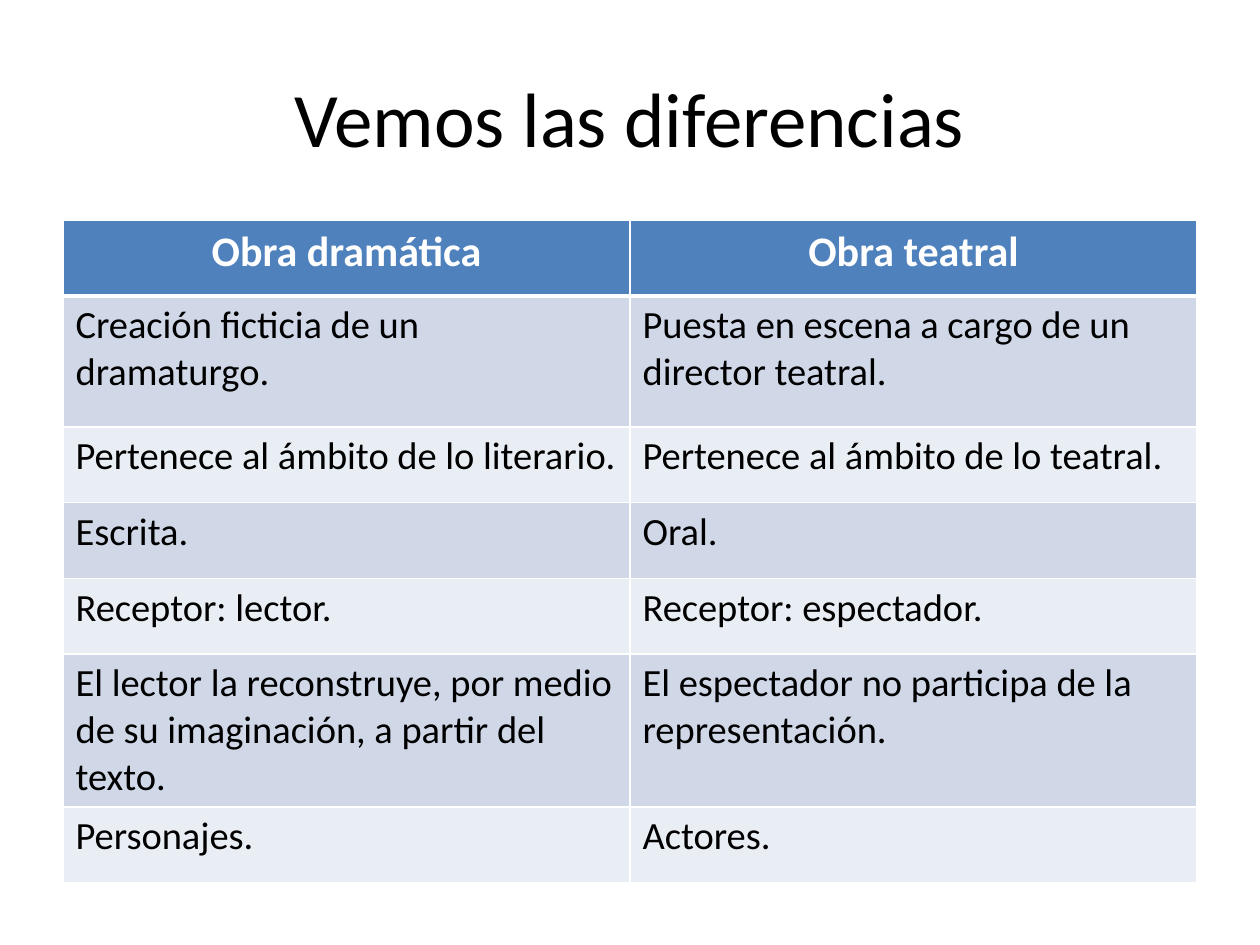
from lxml import etree
from pptx import Presentation
from pptx import util as u
from pptx.dml.color import RGBColor
from pptx.enum import text
from pptx.oxml import ns

BLACK = RGBColor(0x00, 0x00, 0x00)
WHITE = RGBColor(0xFF, 0xFF, 0xFF)
HEADER_BLUE = RGBColor(0x4F, 0x81, 0xBD)
BANDS = (RGBColor(0xE9, 0xED, 0xF4), RGBColor(0xD0, 0xD8, 0xE8))

FONT = "Calibri"
MARGIN = 0.5
CONTENT_WIDTH = 9
ROW_HEIGHT = 0.6
TALL_ROW_HEIGHT = 1.04
TALL_ROWS = (1, 5)

COMPARISON = [
    ("Obra dramática", "Obra teatral"),
    ("Creación ficticia de un dramaturgo.",
     "Puesta en escena a cargo de un director teatral."),
    ("Pertenece al ámbito de lo literario.", "Pertenece al ámbito de lo teatral."),
    ("Escrita.", "Oral."),
    ("Receptor: lector.", "Receptor: espectador."),
    ("El lector la reconstruye, por medio de su imaginación, a partir del texto.",
     "El espectador no participa de la representación."),
    ("Personajes.", "Actores."),
]


def format_paragraph(paragraph, size, color, bold=False, align=text.PP_ALIGN.LEFT):
    paragraph.alignment = align
    paragraph.font.name = FONT
    paragraph.font.size = u.Pt(size)
    paragraph.font.bold = bold
    paragraph.font.color.rgb = color


def add_title(slide, wording):
    title = slide.shapes.title
    title.left, title.top = u.Inches(MARGIN), u.Inches(0.3)
    title.width, title.height = u.Inches(CONTENT_WIDTH), u.Inches(1.25)
    title.text_frame.text = wording
    title.text_frame.vertical_anchor = text.MSO_ANCHOR.MIDDLE
    format_paragraph(title.text_frame.paragraphs[0], 44, BLACK,
                     align=text.PP_ALIGN.CENTER)


def set_borders(cell, top=1, bottom=1):
    properties = cell._tc.get_or_add_tcPr()
    for side, width in (("L", 1), ("R", 1), ("T", top), ("B", bottom)):
        line = etree.SubElement(properties, ns.qn(f"a:ln{side}"), w=str(u.Pt(width)))
        fill = etree.SubElement(line, ns.qn("a:solidFill"))
        etree.SubElement(fill, ns.qn("a:srgbClr"), val=str(WHITE))


def fill_cell(cell, wording, row):
    is_header = row == 0
    set_borders(cell, top=3 if row == 1 else 1, bottom=3 if is_header else 1)
    cell.fill.solid()
    cell.fill.fore_color.rgb = HEADER_BLUE if is_header else BANDS[row % 2]
    cell.text = wording
    paragraph = cell.text_frame.paragraphs[0]
    if is_header:
        format_paragraph(paragraph, 24, WHITE, True, text.PP_ALIGN.CENTER)
    else:
        format_paragraph(paragraph, 22, BLACK)


def add_comparison(slide, rows):
    heights = [TALL_ROW_HEIGHT if row in TALL_ROWS else ROW_HEIGHT
               for row in range(len(rows))]
    table = slide.shapes.add_table(
        len(rows), len(rows[0]), u.Inches(MARGIN), u.Inches(1.75),
        u.Inches(CONTENT_WIDTH), u.Inches(sum(heights))).table
    for row, wordings in enumerate(rows):
        table.rows[row].height = u.Inches(heights[row])
        for column, wording in enumerate(wordings):
            fill_cell(table.cell(row, column), wording, row)


def main():
    presentation = Presentation()
    presentation.slide_width = u.Inches(10)
    presentation.slide_height = u.Inches(7.5)
    slide = presentation.slides.add_slide(presentation.slide_layouts[5])
    add_title(slide, "Vemos las diferencias")
    add_comparison(slide, COMPARISON)
    presentation.save("out.pptx")


if __name__ == "__main__":
    main()
